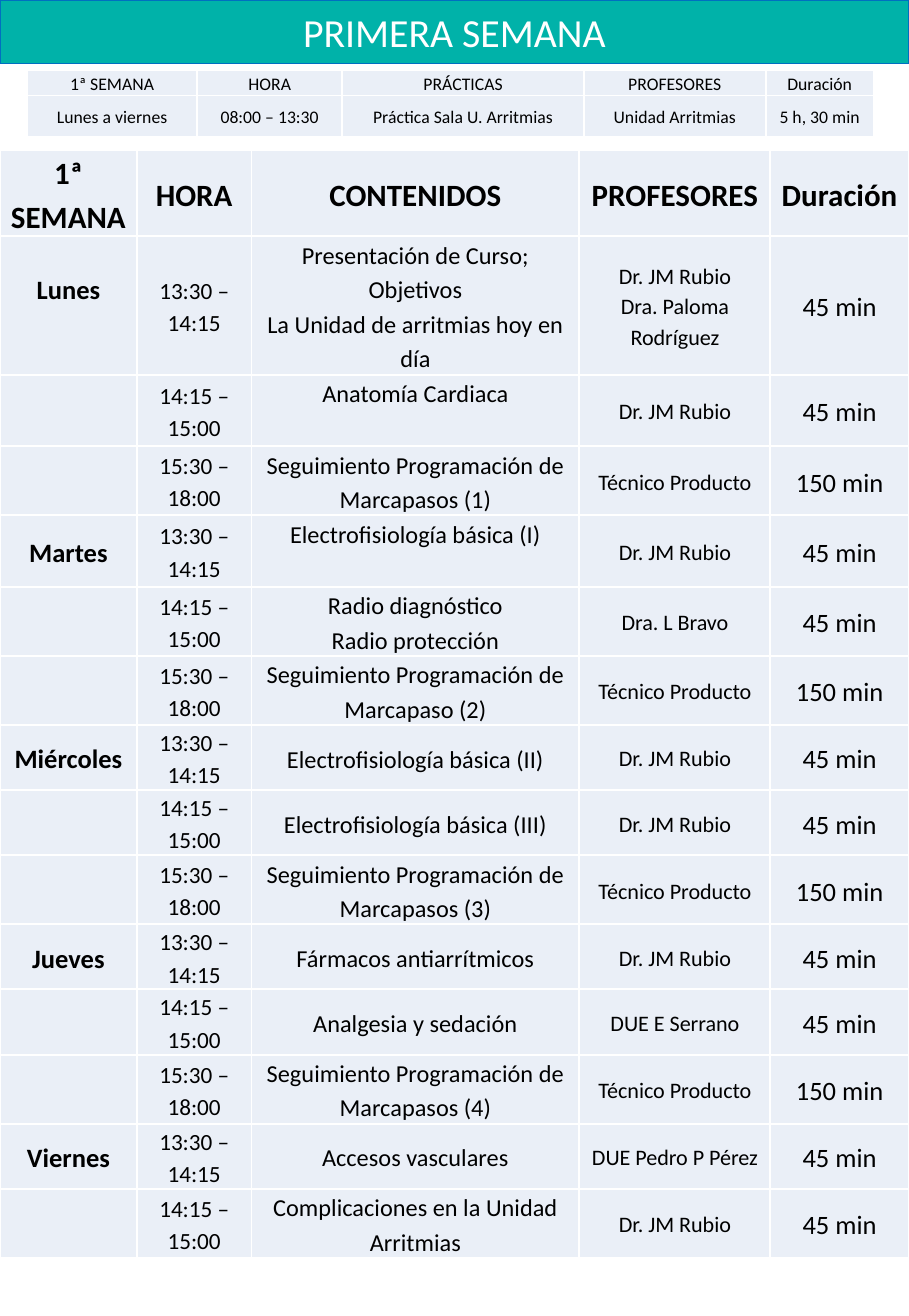
from pptx import Presentation
from pptx.dml.color import RGBColor
from pptx.enum.text import MSO_ANCHOR, MSO_AUTO_SIZE, PP_ALIGN
from pptx.oxml import parse_xml
from pptx.oxml.ns import nsdecls
from pptx.util import Inches, Pt

CENTER = PP_ALIGN.CENTER
TOP, MIDDLE = MSO_ANCHOR.TOP, MSO_ANCHOR.MIDDLE
NO_FIT = MSO_AUTO_SIZE.NONE


def write(tf, text, size, color="000000", bold=False, spacing=1.15):
    """Fill a text frame, one centred paragraph per line of text."""
    tf.word_wrap = True
    for i, line in enumerate(text.split("\n")):
        p = tf.paragraphs[0] if i == 0 else tf.add_paragraph()
        p.alignment = CENTER
        p.line_spacing = spacing
        r = p.add_run()
        r.text = line
        r.font.name = "Calibri"
        r.font.size = Pt(size)
        r.font.bold = bold
        r.font.color.rgb = RGBColor.from_string(color)


def add_grid(s, left, top, widths, heights, rows, sizes, head_size, head_bold):
    """Add a table with pale cells and white borders; return it."""
    frame = s.shapes.add_table(len(rows), len(widths), Inches(left), Inches(top),
                               Inches(sum(widths)), Inches(sum(heights)))
    table = frame.table
    table.first_row = table.horz_banding = False
    for column, width in zip(table.columns, widths):
        column.width = Inches(width)
    for i, (row, height) in enumerate(zip(rows, heights)):
        table.rows[i].height = Inches(height)
        for j, text in enumerate(row):
            cell = table.cell(i, j)
            cell.margin_left = cell.margin_right = Inches(0.03)
            cell.margin_top = cell.margin_bottom = 0
            cell.vertical_anchor = MIDDLE
            if text:
                size = sizes[j] if i else head_size
                bold = head_bold and (i == 0 or j == 0)
                write(cell.text_frame, text, size, bold=bold)
            tc_pr = cell._tc.get_or_add_tcPr()
            for side in ("lnL", "lnR", "lnT", "lnB"):
                tc_pr.append(parse_xml(
                    f'<a:{side} {nsdecls("a")} w="12700"><a:solidFill>'
                    f'<a:srgbClr val="FFFFFF"/></a:solidFill></a:{side}>'))
            cell.fill.solid()
            cell.fill.fore_color.rgb = RGBColor.from_string("EAEFF7")
    return table


prs = Presentation()
prs.slide_width = Inches(5.71)
prs.slide_height = Inches(8.27)
s = prs.slides.add_slide(prs.slide_layouts[5])

# Title band
title = s.shapes.title
title.left = title.top = 0
title.width, title.height = Inches(5.71), Inches(0.4)
title.fill.solid()
title.fill.fore_color.rgb = RGBColor.from_string("00B2A9")
title.line.color.rgb = RGBColor.from_string("0070C0")
title.line.width = Pt(0.75)
title.text_frame.auto_size = NO_FIT
title.text_frame.vertical_anchor = MIDDLE
write(title.text_frame, "PRIMERA SEMANA", 18, color="FFFFFF", spacing=1.0)

# Practice sessions
practice = [
    ["1ª SEMANA", "HORA", "PRÁCTICAS", "PROFESORES", "Duración"],
    ["Lunes a viernes", "08:00 – 13:30", "Práctica Sala U. Arritmias",
     "Unidad Arritmias", "5 h, 30 min"],
]
add_grid(s, 0.17, 0.44, [1.07, 0.91, 1.52, 1.14, 0.68], [0.16, 0.26],
         practice, [8] * 5, 8, False)

# Lessons: each day fills the same time slots in order
slots = [("13:30 – 14:15", "45 min"), ("14:15 – 15:00", "45 min"),
         ("15:30 – 18:00", "150 min")]
rubio, technician = "Dr. JM Rubio", "Técnico Producto"
follow_up = "Seguimiento Programación de "
days = {
    "Lunes": [
        ("Presentación de Curso; Objetivos\nLa Unidad de arritmias hoy en día",
         rubio + "\nDra. Paloma Rodríguez"),
        ("Anatomía Cardiaca", rubio),
        (follow_up + "Marcapasos (1)", technician)],
    "Martes": [
        ("Electrofisiología básica (I)", rubio),
        ("Radio diagnóstico\nRadio protección", "Dra. L Bravo"),
        (follow_up + "Marcapaso (2)", technician)],
    "Miércoles": [
        ("Electrofisiología básica (II)", rubio),
        ("Electrofisiología básica (III)", rubio),
        (follow_up + "Marcapasos (3)", technician)],
    "Jueves": [
        ("Fármacos antiarrítmicos", rubio),
        ("Analgesia y sedación", "DUE E Serrano"),
        (follow_up + "Marcapasos (4)", technician)],
    "Viernes": [
        ("Accesos vasculares", "DUE Pedro P Pérez"),
        ("Complicaciones en la Unidad Arritmias", rubio)],
}
lessons = [["1ª SEMANA", "HORA", "CONTENIDOS", "PROFESORES", "Duración"]]
for day, entries in days.items():
    for i, ((hour, length), (topic, teacher)) in enumerate(zip(slots, entries)):
        lessons.append(["" if i else day, hour, topic, teacher, length])

heights = [0.54, 0.87, 0.45, 0.43, 0.45, 0.43, 0.43, 0.41, 0.41, 0.43,
           0.41, 0.41, 0.43, 0.41, 0.43]
table = add_grid(s, 0, 0.94, [0.86, 0.72, 2.06, 1.2, 0.87], heights,
                 lessons, [12, 10.5, 11, 10, 12], 14, True)

# Cells whose text sits above the middle
table.cell(1, 0).margin_bottom = Inches(0.22)
for row in (2, 4):
    table.cell(row, 2).vertical_anchor = TOP

prs.save("out.pptx")
